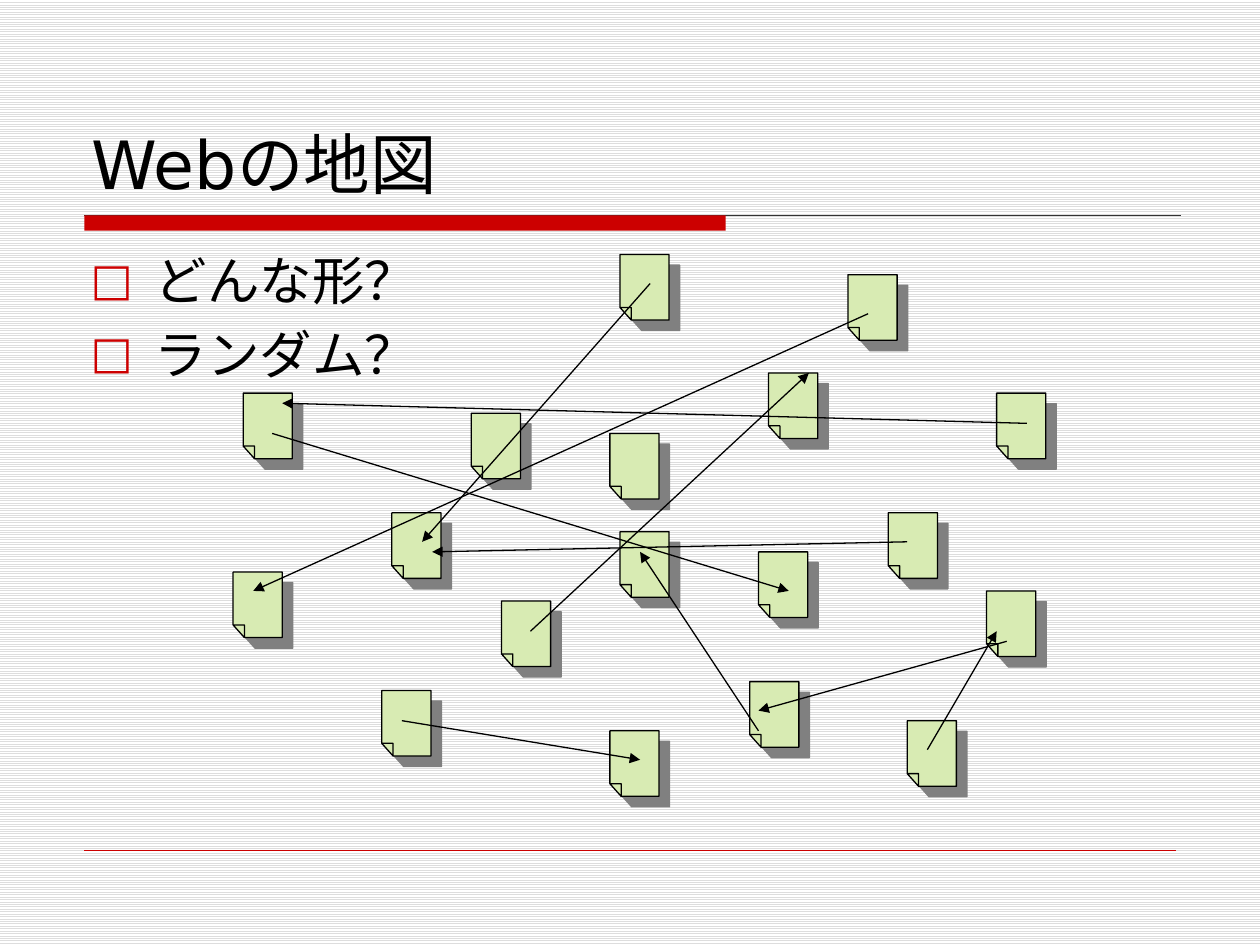
"""Build a slide that shows web pages scattered on a map and joined by links."""
import pptx
import pptx.dml.color
import pptx.enum.dml
import pptx.enum.shapes
import pptx.enum.text
import pptx.oxml
import pptx.oxml.ns
import pptx.util
from pptx.util import Inches

COLORS = {"accent": "CC0000", "text": "000000", "rule": "333333", "page": "D8EBB3",
          "shadow": "808080", "stripe": "DDDDDD", "paper": "FFFFFF"}
FONT = "DejaVu Sans"
PAGE_OUTLINE = [(0, 0), (0.39, 0), (0.39, 0.52), (0.09, 0.52), (0, 0.42),
                (0.09, 0.42), (0.09, 0.52), (0.09, 0.42), (0, 0.42)]
PAGES = [(1.93, 3.12), (3.74, 3.28), (1.85, 4.54), (3.11, 4.07), (4.92, 4.22), (3.03, 5.48),
         (4.92, 2.02), (6.73, 2.18), (4.84, 3.44), (6.1, 2.96), (7.91, 3.12), (6.02, 4.38),
         (3.98, 4.77), (4.84, 5.8), (5.95, 5.41), (7.05, 4.07), (7.83, 4.69), (7.2, 5.72)]
LINKS = [((2.16, 3.44), (6.26, 4.69)), ((5.16, 2.25), (3.35, 4.3)),
         ((3.19, 5.72), (5.08, 6.03)), ((7.2, 4.3), (3.43, 4.38)),
         ((6.89, 2.49), (2.01, 4.69)), ((8.15, 3.36), (2.24, 3.2)),
         ((6.02, 5.8), (5.08, 4.38)), ((4.21, 5.01), (6.42, 2.96)),
         ((7.99, 5.09), (6.02, 5.64)), ((7.36, 5.95), (7.91, 5.01))]


def color(name):
    return pptx.dml.color.RGBColor.from_string(COLORS[name])


def set_values(target, values):
    for name, value in values.items():
        setattr(target, name, value)


def add_xml(parent, tag, inner="", attributes=""):
    namespace = pptx.oxml.ns.nsdecls("a")
    parent.append(pptx.oxml.parse_xml(f"<a:{tag} {namespace} {attributes}>{inner}</a:{tag}>"))


def color_xml(name):
    return f'<a:srgbClr val="{COLORS[name]}"/>'


def paint_background(slide):
    fill = slide.background.fill
    fill.patterned()
    fill.pattern = pptx.enum.dml.MSO_PATTERN.LIGHT_HORIZONTAL
    fill.fore_color.rgb = color("stripe")
    fill.back_color.rgb = color("paper")


def fill_placeholder(box, place, lines, size, anchor):
    left, top, width, height = map(Inches, place)
    set_values(box, {"left": left, "top": top, "width": width, "height": height})
    set_values(box.text_frame, {"text": "\n".join(lines), "vertical_anchor": anchor,
                                "word_wrap": True,
                                "auto_size": pptx.enum.text.MSO_AUTO_SIZE.NONE})
    for para in box.text_frame.paragraphs:
        para.alignment = pptx.enum.text.PP_ALIGN.LEFT
        for span in para.runs:
            set_values(span.font, {"name": FONT, "size": pptx.util.Pt(size)})
            span.font.color.rgb = color("text")


def add_bullets(box):
    for para in box.text_frame.paragraphs:
        para.space_before = pptx.util.Pt(6)
        properties = para._p.get_or_add_pPr()
        properties.set("marL", str(Inches(0.51)))
        properties.set("indent", str(Inches(-0.51)))
        add_xml(properties, "buClr", color_xml("accent"))
        add_xml(properties, "buSzPct", attributes='val="85000"')
        add_xml(properties, "buFont", attributes=f'typeface="{FONT}"')
        add_xml(properties, "buChar", attributes='char="□"')


def add_line(shapes, start, end, color_name, width=0.75, arrow=False):
    line = shapes.add_connector(pptx.enum.shapes.MSO_CONNECTOR.STRAIGHT,
                                *map(Inches, (*start, *end)))
    line.line.color.rgb = color(color_name)
    line.line.width = pptx.util.Pt(width)
    if arrow:
        add_xml(line.line._get_or_add_ln(), "tailEnd", attributes='type="triangle"')
    add_xml(line._element.spPr, "effectLst")


def add_title_bar(shapes):
    bar = shapes.add_shape(pptx.enum.shapes.MSO_SHAPE.RECTANGLE,
                           *map(Inches, (0.67, 1.71, 5.09, 0.12)))
    bar.shadow.inherit = False
    bar.fill.solid()
    bar.fill.fore_color.rgb = color("accent")
    bar.line.fill.background()


def add_page(shapes, left, top):
    points = [(Inches(x), Inches(y)) for x, y in PAGE_OUTLINE]
    builder = shapes.build_freeform(*points[0])
    builder.add_line_segments(points[1:], close=True)
    page = builder.convert_to_shape(Inches(left), Inches(top))
    page.fill.solid()
    page.fill.fore_color.rgb = color("page")
    page.line.color.rgb = color("text")
    page.line.width = pptx.util.Pt(0.75)
    distance = pptx.util.Pt(8.5)
    add_xml(page._element.spPr, "effectLst",
            f'<a:outerShdw dist="{distance}" dir="2700000" algn="ctr" rotWithShape="0">'
            f'{color_xml("shadow")}</a:outerShdw>')


def main():
    deck = pptx.Presentation()
    set_values(deck, {"slide_width": Inches(10), "slide_height": Inches(7.5)})
    slide = deck.slides.add_slide(deck.slide_layouts[1])
    paint_background(slide)
    title, body = slide.placeholders
    anchors = pptx.enum.text.MSO_ANCHOR
    fill_placeholder(title, (0.63, 0.33, 8.75, 1.33), ["Webの地図"], 38, anchors.BOTTOM)
    fill_placeholder(body, (0.62, 1.92, 8.75, 1.32), ["どんな形？", "ランダム？"], 30, anchors.TOP)
    add_bullets(body)
    add_line(slide.shapes, (0.67, 1.71), (9.37, 1.71), "rule")
    add_title_bar(slide.shapes)
    add_line(slide.shapes, (0.67, 6.75), (9.33, 6.75), "accent", width=0.25)
    web = slide.shapes.add_group_shape().shapes
    for left, top in PAGES:
        add_page(web, left, top)
    for start, end in LINKS:
        add_line(web, start, end, "text", arrow=True)
    deck.save("out.pptx")


if __name__ == "__main__":
    main()
